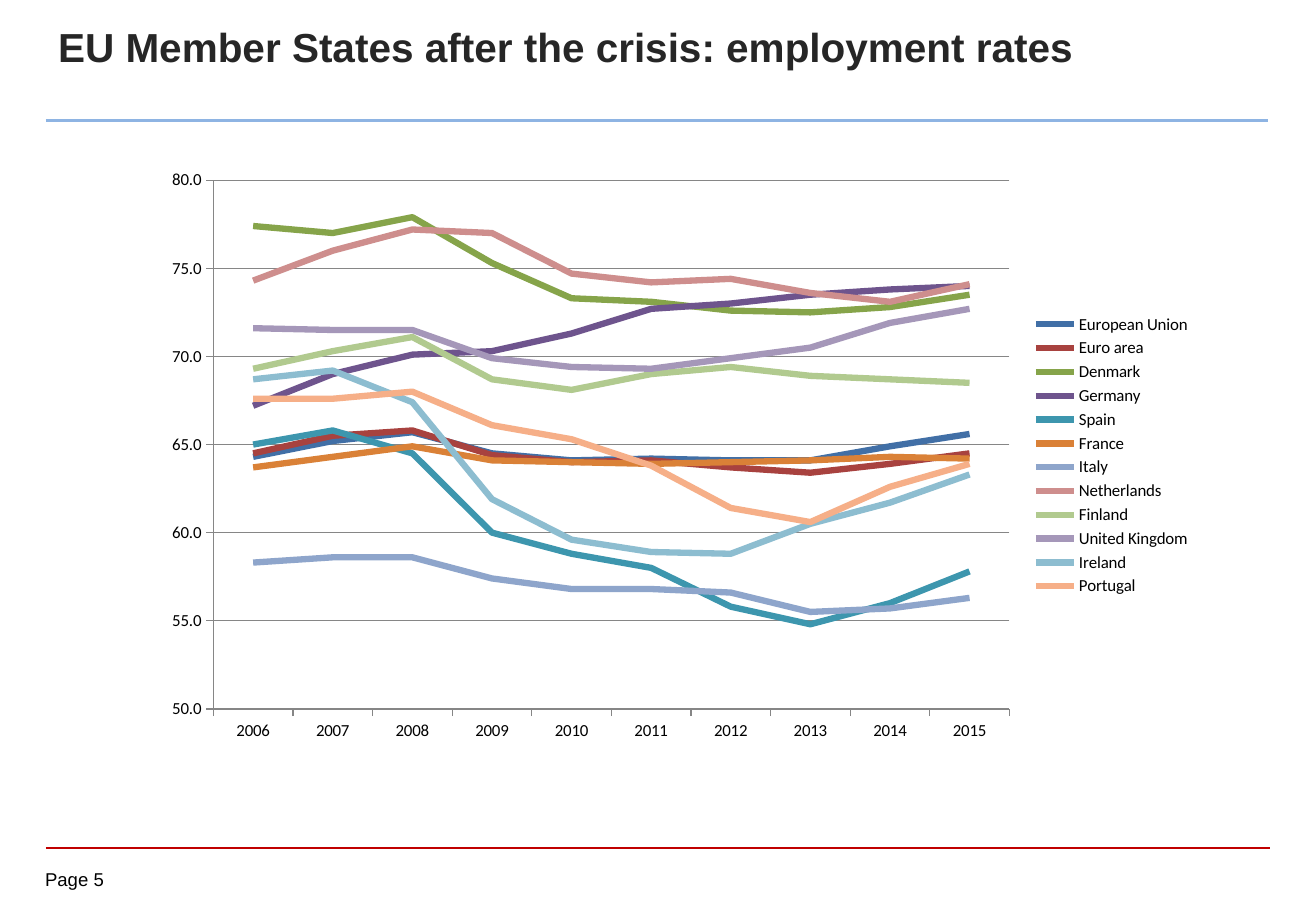
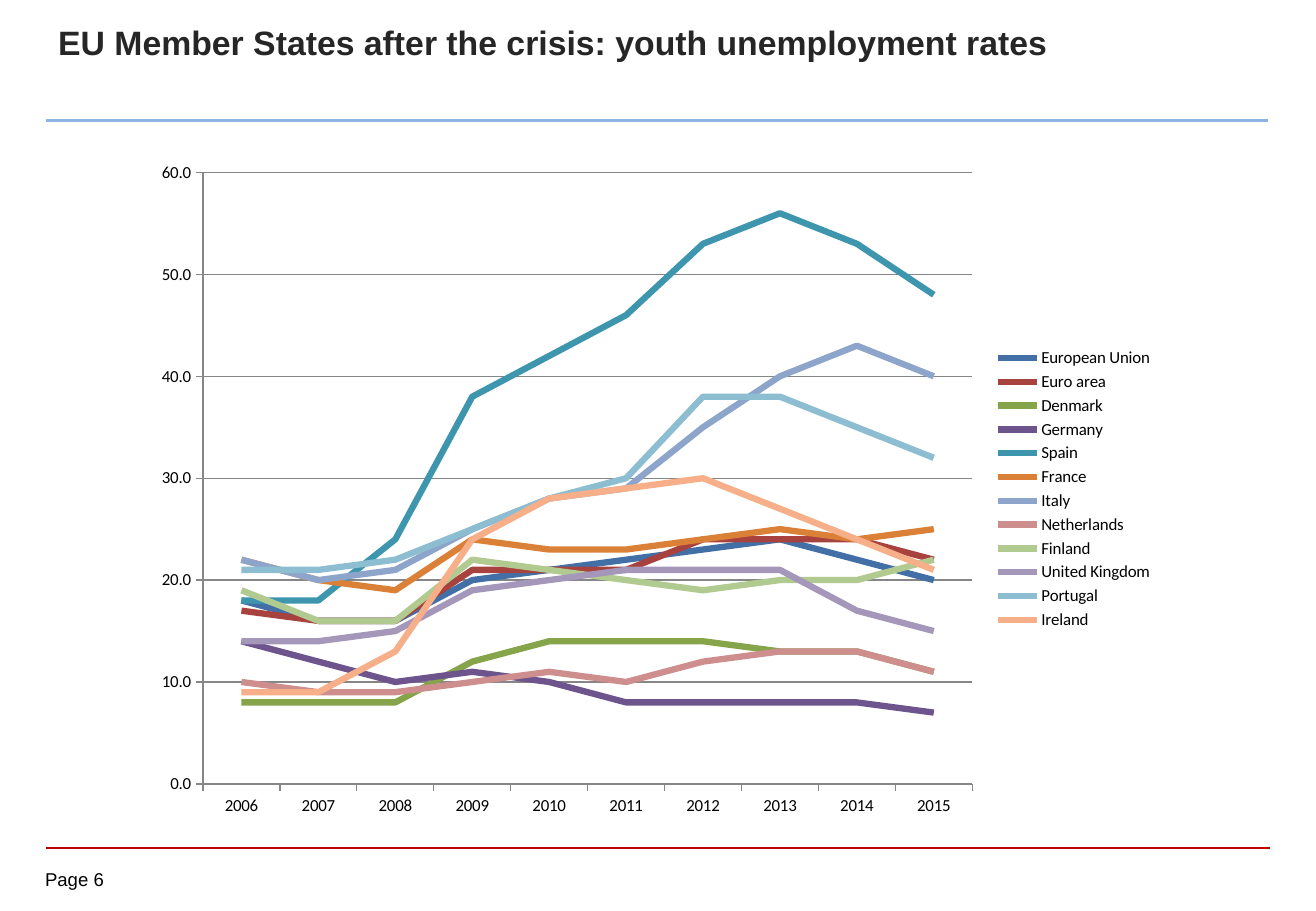
from dataclasses import dataclass

from lxml import etree
from pptx import Presentation
from pptx.chart import data as chart_data
from pptx.dml.color import RGBColor
from pptx.enum import chart as chart_enum
from pptx.enum import shapes, text
from pptx.oxml import ns
from pptx.util import Pt

BLACK = RGBColor(0x00, 0x00, 0x00)
TITLE_GREY = RGBColor(0x26, 0x26, 0x26)
AXIS_GREY = RGBColor(0x86, 0x86, 0x86)
RULE_BLUE = RGBColor(0x8E, 0xB4, 0xE3)
RULE_RED = RGBColor(0xC0, 0x00, 0x00)
SERIES_COLOURS = [
    RGBColor(0x41, 0x6F, 0xA6),
    RGBColor(0xA8, 0x42, 0x3F),
    RGBColor(0x86, 0xA4, 0x4A),
    RGBColor(0x6E, 0x54, 0x8D),
    RGBColor(0x3D, 0x96, 0xAE),
    RGBColor(0xDA, 0x81, 0x37),
    RGBColor(0x8E, 0xA5, 0xCB),
    RGBColor(0xCE, 0x8E, 0x8D),
    RGBColor(0xB1, 0xCA, 0x8F),
    RGBColor(0xA5, 0x97, 0xB9),
    RGBColor(0x8D, 0xBD, 0xD0),
    RGBColor(0xF6, 0xAF, 0x88),
]
TITLE_FONT = "Arial"
CHART_FONT = "Calibri"
MARGIN = 27.2
YEARS = [str(year) for year in range(2006, 2016)]


@dataclass
class Rule:
    top: float
    right: float
    width: float
    colour: RGBColor


@dataclass
class Frame:
    left: float
    top: float
    width: float
    height: float


@dataclass
class Scale:
    minimum: float
    maximum: float
    step: float


@dataclass
class ChartPage:
    number: int
    title: str
    title_size: float
    title_height: float
    frame: Frame
    scale: Scale
    rates: dict[str, list[float]]


RULES = [Rule(502.5, 753, 1, RULE_RED), Rule(71.5, 751.5, 1.5, RULE_BLUE)]

EMPLOYMENT = {
    "European Union": [64.3, 65.2, 65.7, 64.5, 64.1, 64.2, 64.1, 64.1, 64.9, 65.6],
    "Euro area": [64.5, 65.5, 65.8, 64.4, 64, 64.1, 63.7, 63.4, 63.9, 64.5],
    "Denmark": [77.4, 77, 77.9, 75.3, 73.3, 73.1, 72.6, 72.5, 72.8, 73.5],
    "Germany": [67.2, 69, 70.1, 70.3, 71.3, 72.7, 73, 73.5, 73.8, 74],
    "Spain": [65, 65.8, 64.5, 60, 58.8, 58, 55.8, 54.8, 56, 57.8],
    "France": [63.7, 64.3, 64.9, 64.1, 64, 63.9, 64, 64.1, 64.3, 64.2],
    "Italy": [58.3, 58.6, 58.6, 57.4, 56.8, 56.8, 56.6, 55.5, 55.7, 56.3],
    "Netherlands": [74.3, 76, 77.2, 77, 74.7, 74.2, 74.4, 73.6, 73.1, 74.1],
    "Finland": [69.3, 70.3, 71.1, 68.7, 68.1, 69, 69.4, 68.9, 68.7, 68.5],
    "United Kingdom": [71.6, 71.5, 71.5, 69.9, 69.4, 69.3, 69.9, 70.5, 71.9, 72.7],
    "Ireland": [68.7, 69.2, 67.4, 61.9, 59.6, 58.9, 58.8, 60.5, 61.7, 63.3],
    "Portugal": [67.6, 67.6, 68, 66.1, 65.3, 63.8, 61.4, 60.6, 62.6, 63.9],
}

YOUTH_UNEMPLOYMENT = {
    "European Union": [18, 16, 16, 20, 21, 22, 23, 24, 22, 20],
    "Euro area": [17, 16, 16, 21, 21, 21, 24, 24, 24, 22],
    "Denmark": [8, 8, 8, 12, 14, 14, 14, 13, 13, 11],
    "Germany": [14, 12, 10, 11, 10, 8, 8, 8, 8, 7],
    "Spain": [18, 18, 24, 38, 42, 46, 53, 56, 53, 48],
    "France": [22, 20, 19, 24, 23, 23, 24, 25, 24, 25],
    "Italy": [22, 20, 21, 25, 28, 29, 35, 40, 43, 40],
    "Netherlands": [10, 9, 9, 10, 11, 10, 12, 13, 13, 11],
    "Finland": [19, 16, 16, 22, 21, 20, 19, 20, 20, 22],
    "United Kingdom": [14, 14, 15, 19, 20, 21, 21, 21, 17, 15],
    "Portugal": [21, 21, 22, 25, 28, 30, 38, 38, 35, 32],
    "Ireland": [9, 9, 13, 24, 28, 29, 30, 27, 24, 21],
}

PAGES = [
    ChartPage(5, "EU Member States after the crisis: employment rates", 24, 51,
              Frame(89.6, 94.2, 623.5, 351.4), Scale(50, 80, 5), EMPLOYMENT),
    ChartPage(6, "EU Member States after the crisis: youth unemployment rates", 20, 57,
              Frame(83.8, 88.6, 607, 402.5), Scale(0, 60, 10), YOUTH_UNEMPLOYMENT),
]


def style_font(font, name: str, size: float, colour: RGBColor, bold: bool = False) -> None:
    font.name = name
    font.size = Pt(size)
    font.bold = bold
    font.color.rgb = colour


def style_line(line, width: float, colour: RGBColor) -> None:
    line.width = Pt(width)
    line.color.rgb = colour


def add_rule(page, rule: Rule) -> None:
    connector = page.shapes.add_connector(
        shapes.MSO_CONNECTOR.STRAIGHT, Pt(MARGIN), Pt(rule.top), Pt(rule.right), Pt(rule.top))
    style_line(connector.line, rule.width, rule.colour)
    etree.SubElement(connector.element.spPr, ns.qn("a:effectLst"))


def add_page_number(page, number: int) -> None:
    box = page.shapes.add_textbox(Pt(26.7), Pt(514.5), Pt(52.5), Pt(16))
    frame = box.text_frame
    frame.margin_left = frame.margin_right = frame.margin_top = frame.margin_bottom = 0
    frame.word_wrap = True
    frame.text = f"Page {number}"
    style_font(frame.paragraphs[0].runs[0].font, TITLE_FONT, 11, BLACK)


def set_title(page, content: ChartPage) -> None:
    title = page.shapes.title
    title.left, title.top = Pt(MARGIN), Pt(9.4)
    title.width, title.height = Pt(641), Pt(content.title_height)
    frame = title.text_frame
    frame.text = content.title
    frame.word_wrap = True
    frame.auto_size = text.MSO_AUTO_SIZE.NONE
    frame.vertical_anchor = text.MSO_ANCHOR.TOP
    paragraph = frame.paragraphs[0]
    paragraph.alignment = text.PP_ALIGN.LEFT
    style_font(paragraph.runs[0].font, TITLE_FONT, content.title_size, TITLE_GREY, True)


def add_rate_chart(page, content: ChartPage) -> None:
    rates = chart_data.CategoryChartData(number_format="#,##0.0")
    rates.categories = YEARS
    for name, values in content.rates.items():
        rates.add_series(name, values)

    frame = content.frame
    chart = page.shapes.add_chart(
        chart_enum.XL_CHART_TYPE.LINE, Pt(frame.left), Pt(frame.top),
        Pt(frame.width), Pt(frame.height), rates).chart
    style_font(chart.font, CHART_FONT, 10, BLACK)
    chart.has_title = False
    chart.has_legend = True
    chart.legend.position = chart_enum.XL_LEGEND_POSITION.RIGHT
    chart.legend.include_in_layout = False

    plot = chart.plots[0]
    plot.vary_by_categories = False
    for series, colour in zip(plot.series, SERIES_COLOURS):
        series.smooth = False
        style_line(series.format.line, 3.75, colour)

    for axis in (chart.category_axis, chart.value_axis):
        axis.major_tick_mark = chart_enum.XL_TICK_MARK.OUTSIDE
        axis.minor_tick_mark = chart_enum.XL_TICK_MARK.NONE
        style_line(axis.format.line, 0.75, AXIS_GREY)

    value_axis = chart.value_axis
    value_axis.minimum_scale = content.scale.minimum
    value_axis.maximum_scale = content.scale.maximum
    value_axis.major_unit = content.scale.step
    value_axis.has_major_gridlines = True
    style_line(value_axis.major_gridlines.format.line, 0.75, AXIS_GREY)
    value_axis.tick_labels.number_format = "#,##0.0"
    value_axis.tick_labels.number_format_is_linked = False


def add_page(deck, content: ChartPage) -> None:
    page = deck.slides.add_slide(deck.slide_layouts.get_by_name("Title Only"))
    for rule in RULES:
        add_rule(page, rule)
    add_page_number(page, content.number)
    set_title(page, content)
    add_rate_chart(page, content)


def main() -> None:
    deck = Presentation()
    deck.slide_width, deck.slide_height = Pt(780), Pt(540)
    for content in PAGES:
        add_page(deck, content)
    deck.save("out.pptx")


if __name__ == "__main__":
    main()
